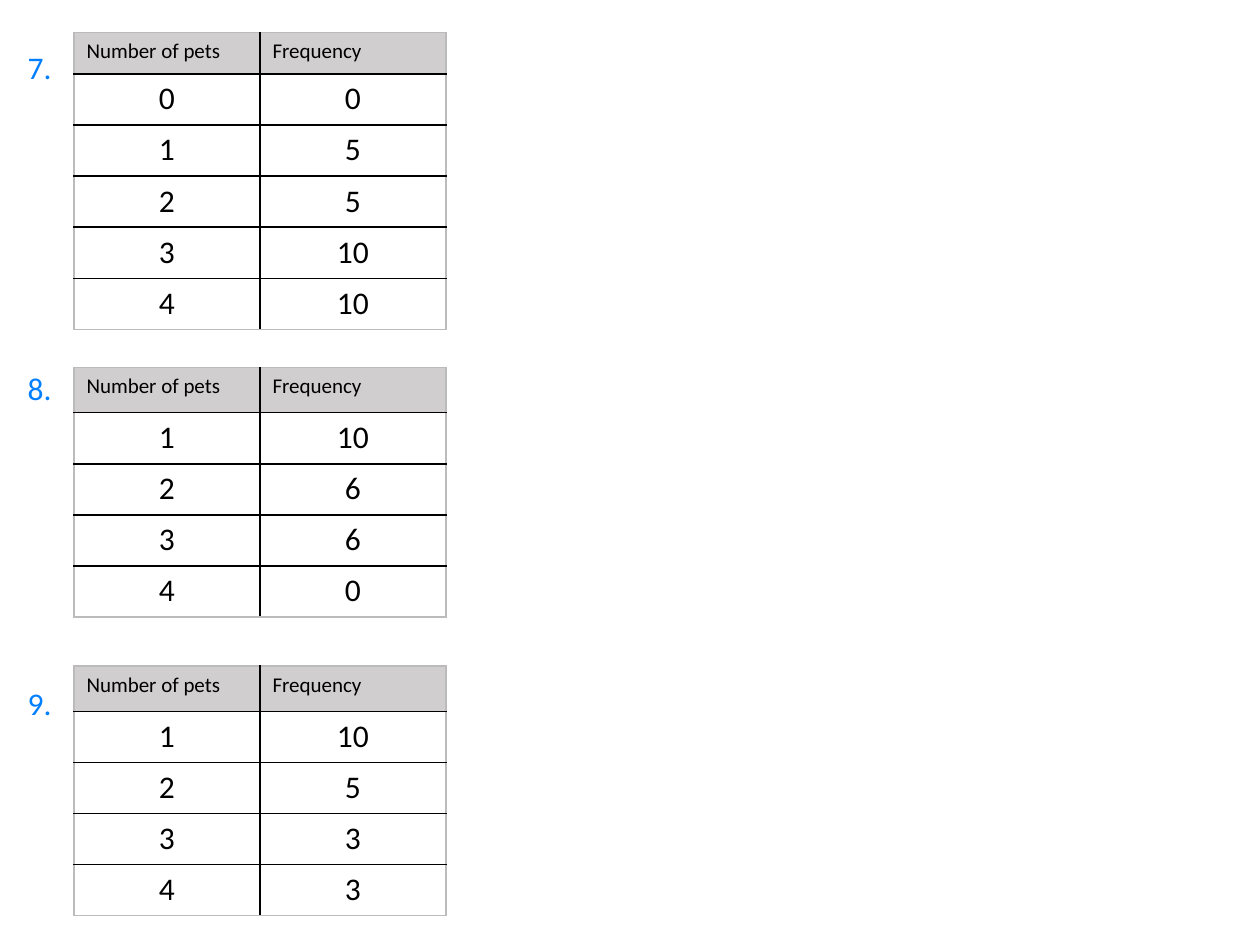
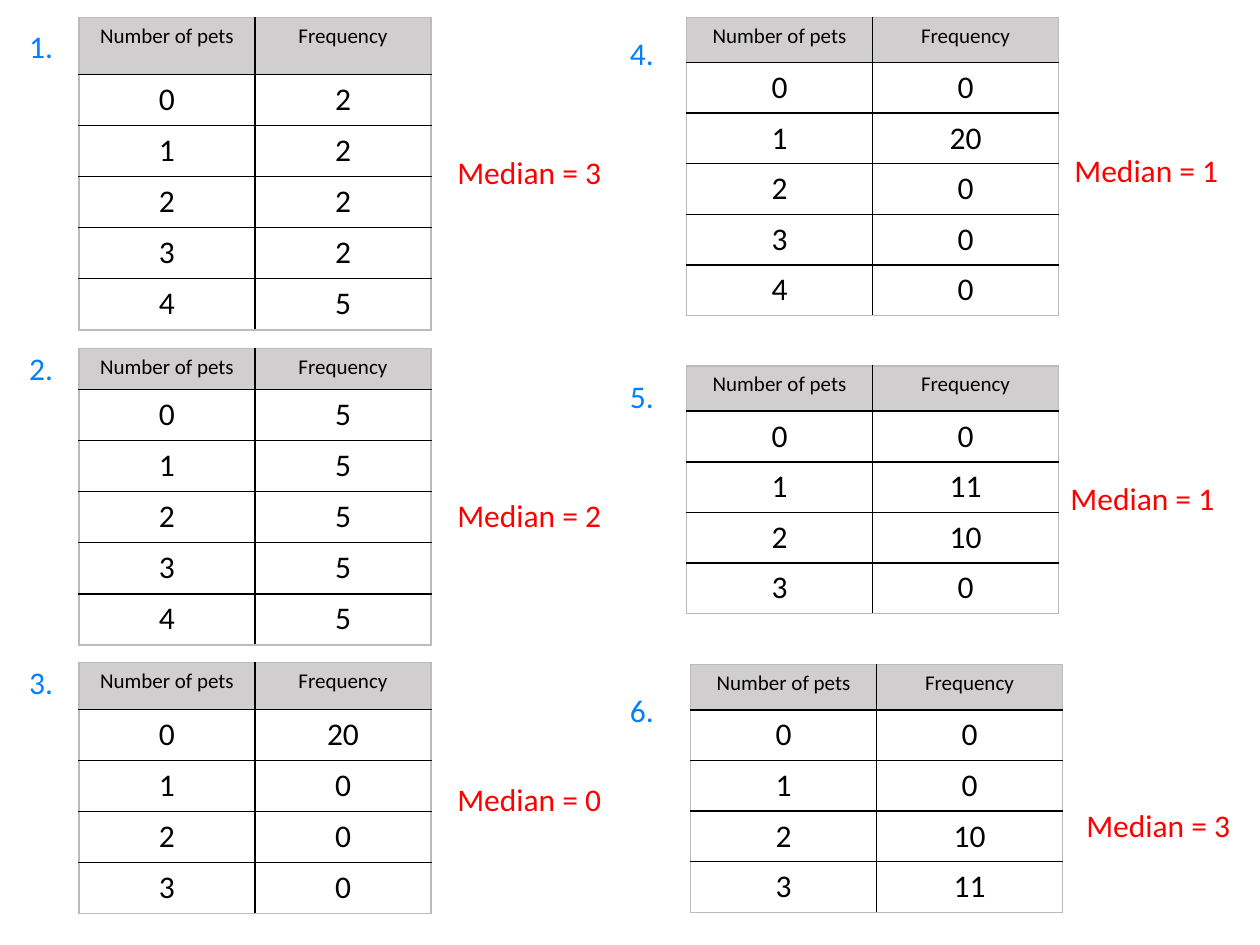
from dataclasses import dataclass

import pptx
import pptx.dml.color
import pptx.enum.text
import pptx.util
from lxml import etree
from pptx.oxml.ns import qn

Cm = pptx.util.Cm
Pt = pptx.util.Pt
PP_ALIGN = pptx.enum.text.PP_ALIGN
MSO_AUTO_SIZE = pptx.enum.text.MSO_AUTO_SIZE


@dataclass(frozen=True)
class Theme:
    font: str = "Calibri"
    text: str = "000000"
    number: str = "007FFF"
    answer: str = "FF0000"
    header_fill: str = "D0CECE"
    grid: str = "000000"
    frame: str = "BBBBBB"
    header_size: int = 12
    body_size: int = 18
    line_width: int = 1


@dataclass(frozen=True)
class TableStyle:
    width: float
    row_height: float
    cell_margin: float  # above and below the text
    header_align: PP_ALIGN


HEADINGS = ("Number of pets", "Frequency")
SIDES = ("lnL", "lnR", "lnT", "lnB")

LEFT_HEADED = TableStyle(7.5, 1.03, 0.12, PP_ALIGN.LEFT)
NARROW = TableStyle(7.1, 1.03, 0.12, PP_ALIGN.CENTER)
WIDE = TableStyle(7.5, 1.02, 0.12, PP_ALIGN.CENTER)

# number: left, top, header height, first pet count, frequencies
QUESTIONS = {
    7: (1.49, 0.66, 0.83, 0, (0, 5, 5, 10, 10)),
    8: (1.49, 7.41, 0.91, 1, (10, 6, 6, 0)),
    9: (1.49, 13.43, 0.91, 1, (10, 5, 3, 3)),
    1: (1.59, 0.35, 1.15, 0, (2, 2, 2, 2, 5)),
    2: (1.59, 7.03, 0.82, 0, (5, 5, 5, 5, 5)),
    3: (1.59, 13.36, 0.94, 0, (20, 0, 0, 0)),
    4: (13.84, 0.35, 0.91, 0, (0, 20, 0, 0, 0)),
    5: (13.84, 7.38, 0.91, 0, (0, 11, 10, 0)),
    6: (13.92, 13.4, 0.91, 0, (0, 0, 10, 11)),
}

# number: left, top of the question number
NUMBERS = {
    7: (0.56, 0.96), 8: (0.56, 7.44), 9: (0.56, 13.79),
    1: (0.59, 0.54), 2: (0.59, 7.03), 3: (0.59, 13.36),
    4: (12.7, 0.69), 5: (12.7, 7.6), 6: (12.7, 13.94),
}

# number: left, top, median
MEDIANS = {
    1: (8.97, 2.96, 3), 2: (8.97, 9.87, 2), 3: (8.97, 15.59, 0),
    4: (21.41, 2.91, 1), 5: (21.33, 9.53, 1), 6: (21.65, 16.13, 3),
}


class Deck:
    def __init__(self, theme):
        self.theme = theme
        self.prs = pptx.Presentation()
        self.prs.slide_width, self.prs.slide_height = Cm(25.4), Cm(19.05)
        self.slide = None

    def add_slide(self):
        self.slide = self.prs.slides.add_slide(self.prs.slide_layouts[6])

    def format(self, p, size, color):
        p.font.name = self.theme.font
        p.font.size = Pt(size)
        p.font.color.rgb = pptx.dml.color.RGBColor.from_string(color)

    def label(self, text, left, top, width, height, color):
        box = self.slide.shapes.add_textbox(Cm(left), Cm(top), Cm(width), Cm(height))
        tf = box.text_frame
        tf.text = text
        self.format(tf.paragraphs[0], self.theme.body_size, color)
        return tf

    def number_label(self, number):
        # A fixed box, a little wider than its text, keeps the number on one line
        tf = self.label(f"{number}.", *NUMBERS[number], 0.7, 0.77, self.theme.number)
        tf.margin_left = tf.margin_top = tf.margin_right = tf.margin_bottom = 0
        tf.word_wrap = True
        tf.auto_size = MSO_AUTO_SIZE.NONE

    def median_label(self, left, top, median):
        tf = self.label(f"Median = {median}", left, top, 3.45, 1.03, self.theme.answer)
        tf.word_wrap = False
        tf.auto_size = MSO_AUTO_SIZE.SHAPE_TO_FIT_TEXT

    def borders(self, cell, outer_sides):
        tc_pr = cell._tc.get_or_add_tcPr()
        for side in SIDES:
            color = self.theme.frame if side in outer_sides else self.theme.grid
            ln = etree.SubElement(tc_pr, qn(f"a:{side}"), w=str(Pt(self.theme.line_width)))
            fill = etree.SubElement(ln, qn("a:solidFill"))
            etree.SubElement(fill, qn("a:srgbClr"), val=color)

    def cell(self, cell, text, style, header, outer_sides):
        theme = self.theme
        self.borders(cell, outer_sides)
        cell.margin_top = cell.margin_bottom = Cm(style.cell_margin)
        if header:
            cell.fill.solid()
            cell.fill.fore_color.rgb = pptx.dml.color.RGBColor.from_string(theme.header_fill)
        else:
            cell.fill.background()
        cell.text = str(text)
        p = cell.text_frame.paragraphs[0]
        p.alignment = style.header_align if header else PP_ALIGN.CENTER
        self.format(p, theme.header_size if header else theme.body_size, theme.text)

    def frequency_table(self, style, left, top, header_height, first, frequencies):
        rows = [HEADINGS, *enumerate(frequencies, first)]
        height = header_height + style.row_height * len(frequencies)
        table = self.slide.shapes.add_table(
            len(rows), 2, Cm(left), Cm(top), Cm(style.width), Cm(height)).table
        table.first_row = table.horz_banding = False
        for i, values in enumerate(rows):
            table.rows[i].height = Cm(style.row_height if i else header_height)
            for j, value in enumerate(values):
                at_edge = (j == 0, j == 1, i == 0, i == len(rows) - 1)
                outer_sides = [side for side, edge in zip(SIDES, at_edge) if edge]
                self.cell(table.cell(i, j), value, style, i == 0, outer_sides)

    def question(self, number, style):
        self.frequency_table(style, *QUESTIONS[number])
        self.number_label(number)
        if number in MEDIANS:
            self.median_label(*MEDIANS[number])


def main():
    deck = Deck(Theme())

    # Questions 7 to 9
    deck.add_slide()
    for number in (7, 8, 9):
        deck.question(number, LEFT_HEADED)

    # Questions 1 to 6 with their medians
    deck.add_slide()
    for number in range(1, 7):
        deck.question(number, NARROW if number <= 3 else WIDE)

    deck.prs.save("out.pptx")


if __name__ == "__main__":
    main()
